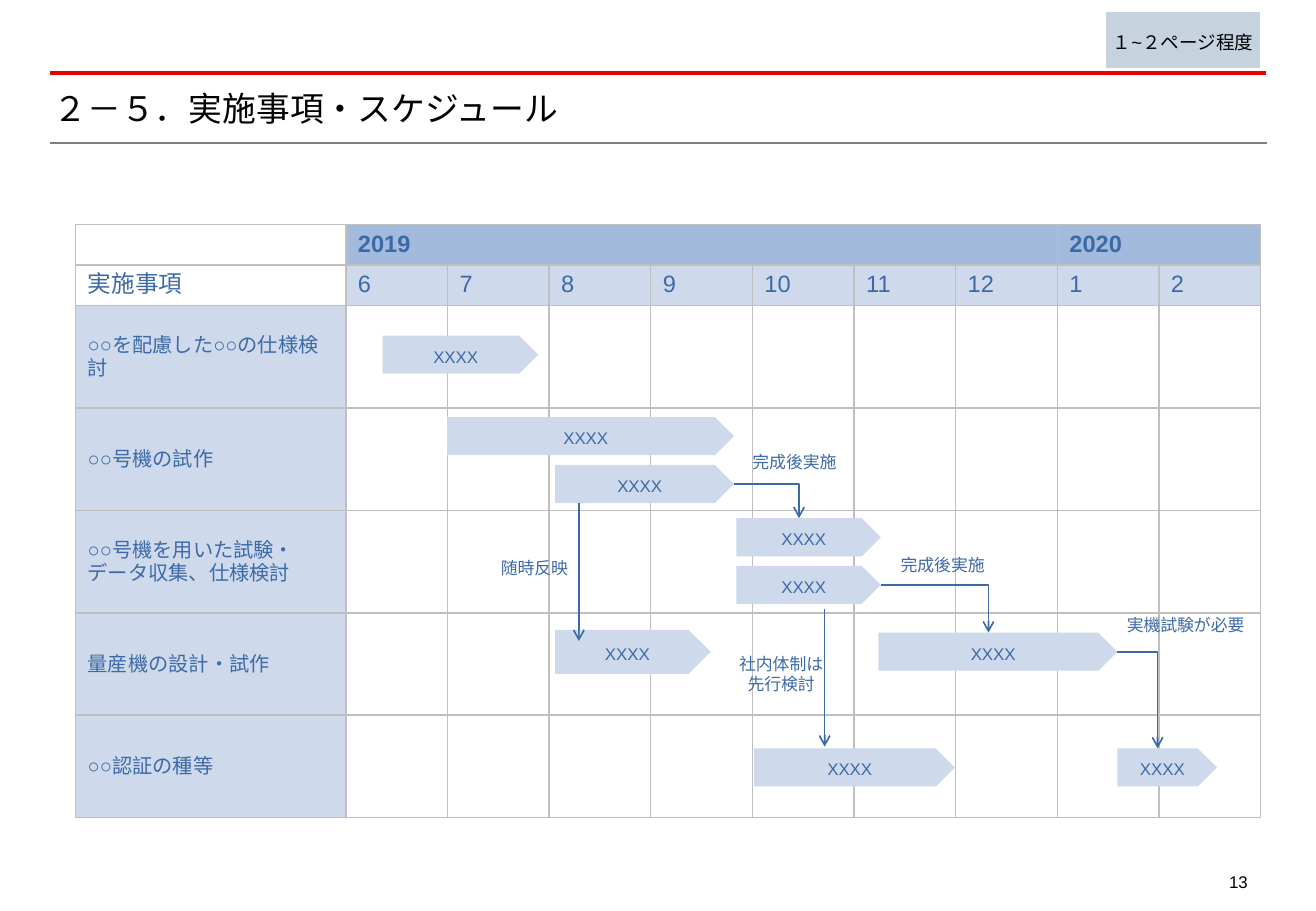
from pptx import Presentation
from pptx.dml.color import RGBColor
from pptx.enum.shapes import MSO_CONNECTOR as Link, MSO_SHAPE as Preset
from pptx.enum.text import MSO_ANCHOR as Anchor, PP_ALIGN as Align
from pptx.oxml.ns import qn
from pptx.util import Pt
from lxml.etree import SubElement

BLACK = RGBColor(0x00, 0x00, 0x00)
RED = RGBColor(0xE6, 0x00, 0x00)
GRAY = RGBColor(0x80, 0x80, 0x80)
TAG_FILL = RGBColor(0xC6, 0xD2, 0xDE)
BLUE = RGBColor(0x3D, 0x6A, 0xA7)
YEAR_FILL = RGBColor(0xA2, 0xBB, 0xDC)
PALE = RGBColor(0xCE, 0xDA, 0xEB)
GRID = "BFBFBF"
JAPANESE = "Noto Sans CJK JP"

# Content
TITLE = "２－５．実施事項・スケジュール"
PAGE_HINT = "１~２ページ程度"
PAGE_NUMBER = "13"
YEARS = [("2019", 1, 7), ("2020", 8, 9)]  # text, first column, last column
MONTHS = ["実施事項", "6", "7", "8", "9", "10", "11", "12", "1", "2"]
TASKS = [
    "○○を配慮した○○の仕様検討",
    "○○号機の試作",
    "○○号機を用いた試験・データ収集、仕様検討",
    "量産機の設計・試作",
    "○○認証の種等",
]
BAR_TEXT = "XXXX"
BARS = {  # left, top, width, height
    "spec": (226.8, 198.9, 92.3, 22.6),
    "build": (265, 247.2, 170, 22.6),
    "build late": (329, 275.6, 106, 22.6),
    "test": (436.4, 307.2, 85.7, 22.6),
    "test late": (436.4, 335.4, 85.7, 22.6),
    "design": (329, 373.4, 92.2, 26),
    "production": (520.7, 375, 141.6, 22.6),
    "certify": (447, 443.6, 119, 22.6),
    "certify late": (662.3, 443.6, 59, 22.6),
}
HANDOVERS = [("build late", "test"), ("test late", "production"),
             ("production", "certify late")]
DROPS = [(343.1, 298.2, 380), (488.8, 361, 442.6)]  # x, top, bottom
LABELS = [  # text, left, top, width, height
    ("随時反映", 289.4, 326.9, 54.7, 20),
    ("完成後実施", 526.3, 325.4, 64.8, 20),
    ("実機試験が必要", 660.2, 360.7, 85, 21.6),
    ("社内体制は\n先行検討", 430.6, 383.8, 64.8, 36),
    ("完成後実施", 438.5, 264.2, 64.8, 20),
]

# Table measures
TABLE_LEFT, TABLE_TOP = 44.8, 133.2
TASK_WIDTH, MONTH_WIDTH = 160.2, 60.25
HEAD_HEIGHT, TASK_HEIGHT = 24, 60.7

deck = Presentation()
deck.slide_width, deck.slide_height = Pt(780), Pt(540)
slide = deck.slides.add_slide(deck.slide_layouts[5])
shapes = slide.shapes


def write(frame, text, size=10, font="Arial", color=BLUE, bold=False, align=Align.LEFT):
    for number, line in enumerate(text.split("\n")):
        paragraph = frame.add_paragraph() if number else frame.paragraphs[0]
        paragraph.alignment = align
        run = paragraph.add_run()
        run.text = line
        run.font.size, run.font.bold, run.font.name = Pt(size), bold, font
        run.font.color.rgb = color
        SubElement(run.font._element, qn("a:ea"), typeface=font)


def set_margins(holder, left, top, right, bottom):
    holder.margin_left, holder.margin_top = Pt(left), Pt(top)
    holder.margin_right, holder.margin_bottom = Pt(right), Pt(bottom)


def add_line(start, end, color, width, arrow=False, kind=Link.STRAIGHT):
    line = shapes.add_connector(kind, *map(Pt, start + end))
    line.line.color.rgb, line.line.width = color, Pt(width)
    if arrow:
        SubElement(line.line._get_or_add_ln(), qn("a:tailEnd"), type="arrow")
    SubElement(line._element.spPr, qn("a:effectLst"))
    return line


def add_block(preset, box, color):
    block = shapes.add_shape(preset, *map(Pt, box))
    block.shadow.inherit = False
    block.fill.solid()
    block.fill.fore_color.rgb = color
    block.line.fill.background()
    block.text_frame.word_wrap = False
    block.text_frame.vertical_anchor = Anchor.MIDDLE
    set_margins(block.text_frame, 1.5, 3.5, 1.5, 1.5)
    return block


def add_label(text, box, **look):
    label = shapes.add_textbox(*map(Pt, box))
    label.text_frame.word_wrap = False
    write(label.text_frame, text, **look)


def style_cell(cell, fill=None):
    set_margins(cell, 7.2, 0, 7.2, 0)
    properties = cell._tc.get_or_add_tcPr()
    for side in ("lnL", "lnR", "lnT", "lnB"):
        edge = SubElement(properties, qn("a:" + side), w=str(Pt(1)))
        SubElement(SubElement(edge, qn("a:solidFill")), qn("a:srgbClr"), val=GRID)
    if fill is None:
        cell.fill.background()
    else:
        cell.fill.solid()
        cell.fill.fore_color.rgb = fill


# Heading
add_line((29.5, 43.2), (750.2, 43.2), RED, 2)
add_line((29.5, 85), (751, 85), GRAY, 1.25)
title = shapes.title
title.left, title.top, title.width, title.height = map(Pt, (31.7, 51.8, 713.5, 24.5))
title.text_frame.vertical_anchor = Anchor.MIDDLE
set_margins(title.text_frame, 0, 0, 0, 0)
write(title.text_frame, TITLE, size=20, font=JAPANESE, color=BLACK)
hint = add_block(Preset.RECTANGLE, (655.9, 7.9, 90.7, 31.7), TAG_FILL)
hint.line.color.rgb, hint.line.width = TAG_FILL, Pt(1)
write(hint.text_frame, PAGE_HINT, size=11, color=BLACK, align=Align.CENTER)

# Schedule table
widths = [TASK_WIDTH] + [MONTH_WIDTH] * (len(MONTHS) - 1)
heights = [HEAD_HEIGHT] * 2 + [TASK_HEIGHT] * len(TASKS)
schedule = shapes.add_table(
    len(heights), len(widths),
    *map(Pt, (TABLE_LEFT, TABLE_TOP, sum(widths), sum(heights)))).table
schedule.first_row = schedule.horz_banding = False
for column, width in zip(schedule.columns, widths):
    column.width = Pt(width)
for row, height in zip(schedule.rows, heights):
    row.height = Pt(height)
for r in range(len(heights)):
    for c in range(len(widths)):
        year_fill = YEAR_FILL if r == 0 and c else None
        pale_fill = PALE if (r == 1 and c) or (r > 1 and c == 0) else None
        style_cell(schedule.cell(r, c), year_fill or pale_fill)
for year, first, last in YEARS:
    cell = schedule.cell(0, first)
    cell.merge(schedule.cell(0, last))
    cell.margin_top = Pt(3.6)
    write(cell.text_frame, year, size=14, bold=True)
for c, month in enumerate(MONTHS):
    cell = schedule.cell(1, c)
    cell.margin_top = Pt(3.6)
    write(cell.text_frame, month, size=14)
for r, task in enumerate(TASKS, start=2):
    cell = schedule.cell(r, 0)
    cell.vertical_anchor = Anchor.MIDDLE
    write(cell.text_frame, task, size=12)

# Work bars
bars = {}
for step, box in BARS.items():
    bars[step] = add_block(Preset.PENTAGON, box, PALE)
    write(bars[step].text_frame, BAR_TEXT, align=Align.CENTER)

# Arrows: elbows run from a bar's tip to the middle of the next bar's flat top
for source, target in HANDOVERS:
    left, top, width, height = BARS[source]
    next_left, next_top, next_width, next_height = BARS[target]
    tip = (left + width, top + height / 2)
    landing = (next_left + (next_width - next_height / 2) / 2, next_top)
    elbow = add_line(tip, landing, BLUE, 1, arrow=True, kind=Link.ELBOW)
    elbow._element.spPr.find(qn("a:prstGeom")).set("prst", "bentConnector2")
    elbow.begin_connect(bars[source], 3)
    elbow.end_connect(bars[target], 0)
    elbow.end_x = Pt(landing[0])
for x, top, bottom in DROPS:
    add_line((x, top), (x, bottom), BLUE, 1, arrow=True)

# Labels and page number
for text, *box in LABELS:
    add_label(text, box, align=Align.CENTER)
add_label(PAGE_NUMBER, (715, 513, 31.7, 20), color=BLACK, align=Align.RIGHT)

deck.save("out.pptx")
